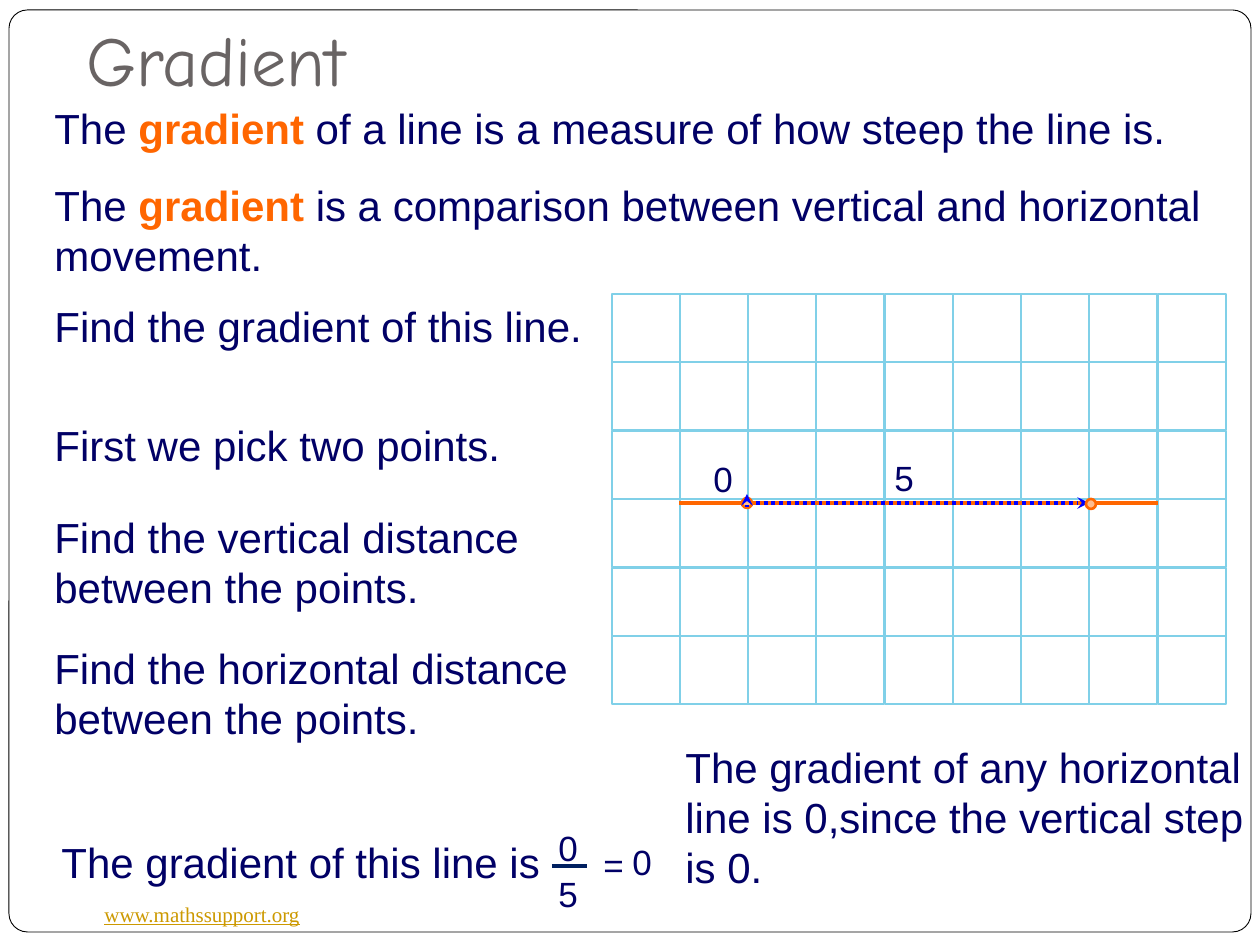
"""Build the Gradient slide: definitions, a worked horizontal line on a grid, and its result."""
from lxml.etree import SubElement
from pptx import Presentation
from pptx.dml.color import RGBColor
from pptx.enum.dml import MSO_LINE
from pptx.enum.shapes import MSO_CONNECTOR, MSO_SHAPE
from pptx.enum.text import MSO_ANCHOR, MSO_AUTO_SIZE
from pptx.oxml.ns import qn
from pptx.util import Emu, Pt

PX = 914400 / 126
C = {"white": "FFFFFF", "black": "000000", "grid": "80D0E8", "navy": "010066",
     "orange": "FF6600", "peach": "FFBC8F", "blue": "0000FF", "bar": "002060",
     "title": "696464", "link": "CC9900"}


def px(*values):
    return [Emu(round(v * PX)) for v in values]


def add_box(shapes, kind, at, fill, line, width):
    sp = shapes.add_shape(kind, *px(*at))
    sp.shadow.inherit = False
    sp.fill.solid()
    sp.fill.fore_color.rgb = RGBColor.from_string(C[fill])
    sp.line.color.rgb = RGBColor.from_string(C[line])
    sp.line.width = Pt(width)
    return sp


prs = Presentation()
prs.slide_width, prs.slide_height = px(1260, 945)
s = prs.slides.add_slide(prs.slide_layouts[6])

frame = add_box(s.shapes, MSO_SHAPE.ROUNDED_RECTANGLE, (9, 10, 1242, 922), "white", "black", 0.5)
frame.adjustments[0] = 0.02

grid = s.shapes.add_group_shape()
for row in range(6):
    for col in range(9):
        at = (612 + col * 273 // 4, 294 + row * 137 // 2, 68, 68)
        add_box(grid.shapes, MSO_SHAPE.RECTANGLE, at, "white", "grid", 0.75)

lines = [
    ((1158, 503, 679, 503), "orange", 2.25, None),
    ((748, 503, 1089, 503), "blue", 2.25, "tailEnd"),
    ((552, 866, 587, 866), "bar", 2, None),
    ((747, 494, 747, 507), "blue", 2.25, "headEnd"),
]
points = [(1086, 499, 10, 10), (742, 498, 10, 10)]
for i, (ends, color, width, arrow) in enumerate(lines):
    if i == 2:
        for at in points:
            add_box(s.shapes, MSO_SHAPE.OVAL, at, "peach", "orange", 1.5)
    ln = s.shapes.add_connector(MSO_CONNECTOR.STRAIGHT, *px(*ends))
    SubElement(ln._element.spPr, qn("a:effectLst"))
    ln.line.color.rgb = RGBColor.from_string(C[color])
    ln.line.width = Pt(width)
    if arrow:
        ln.line.dash_style = MSO_LINE.ROUND_DOT
        SubElement(ln.line._get_or_add_ln(), qn(f"a:{arrow}"), type="stealth")

texts = [
    ((42, 96, 1137, 63), 24, False,
     ["The ", "gradient", " of a line is a measure of how steep the line is."]),
    ((42, 173, 1203, 115), 24, True,
     ["The ", "gradient", " is a comparison between vertical and horizontal movement."]),
    ((42, 294, 583, 63), 24, False, ["Find the gradient of this line."]),
    ((42, 413, 488, 63), 24, False, ["First we pick two points."]),
    ((42, 505, 543, 115), 24, True, ["Find the vertical distance between the points."]),
    ((42, 636, 543, 115), 24, True, ["Find the horizontal distance between the points."]),
    ((49, 830, 533, 63), 24, False, ["The gradient of this line is"]),
    ((673, 735, 587, 165), 24, True,
     ["The gradient of any horizontal line is 0,since the vertical step is 0."]),
    ((701, 451, 45, 55), 20, False, ["0"]),
    ((882, 450, 45, 55), 20, False, ["5"]),
    ((546, 820, 45, 55), 20, False, ["0"]),
    ((546, 866, 45, 55), 20, False, ["5"]),
    ((591, 837, 45, 55), 20, False, ["="]),
    ((620, 834, 45, 55), 20, False, ["0"]),
]
for at, size, wrap, parts in texts:
    tf = s.shapes.add_textbox(*px(*at)).text_frame
    tf.word_wrap = wrap
    tf.auto_size = MSO_AUTO_SIZE.SHAPE_TO_FIT_TEXT
    for part in parts:
        r = tf.paragraphs[0].add_run()
        r.text = part
        r.font.name = "Arial"
        r.font.size = Pt(size)
        r.font.bold = part == "gradient"
        r.font.color.rgb = RGBColor.from_string(C["orange" if r.font.bold else "navy"])

labels = [
    ((74, -4, 1134, 117), "Gradient", "Comic Neue", 40, "title"),
    ((92, 895, 223, 38), "www.mathssupport.org", "Times New Roman", 12, "link"),
]
for at, text, font, size, color in labels:
    tf = s.shapes.add_textbox(*px(*at)).text_frame
    tf.text = text
    tf.word_wrap = color == "title"
    r = tf.paragraphs[0].runs[0]
    r.font.name = font
    r.font.size = Pt(size)
    r.font.color.rgb = RGBColor.from_string(C[color])
    if color == "title":
        tf.vertical_anchor = MSO_ANCHOR.BOTTOM
        tf.margin_bottom = px(13)[0]
    else:
        r.font.underline = True

prs.save("out.pptx")
